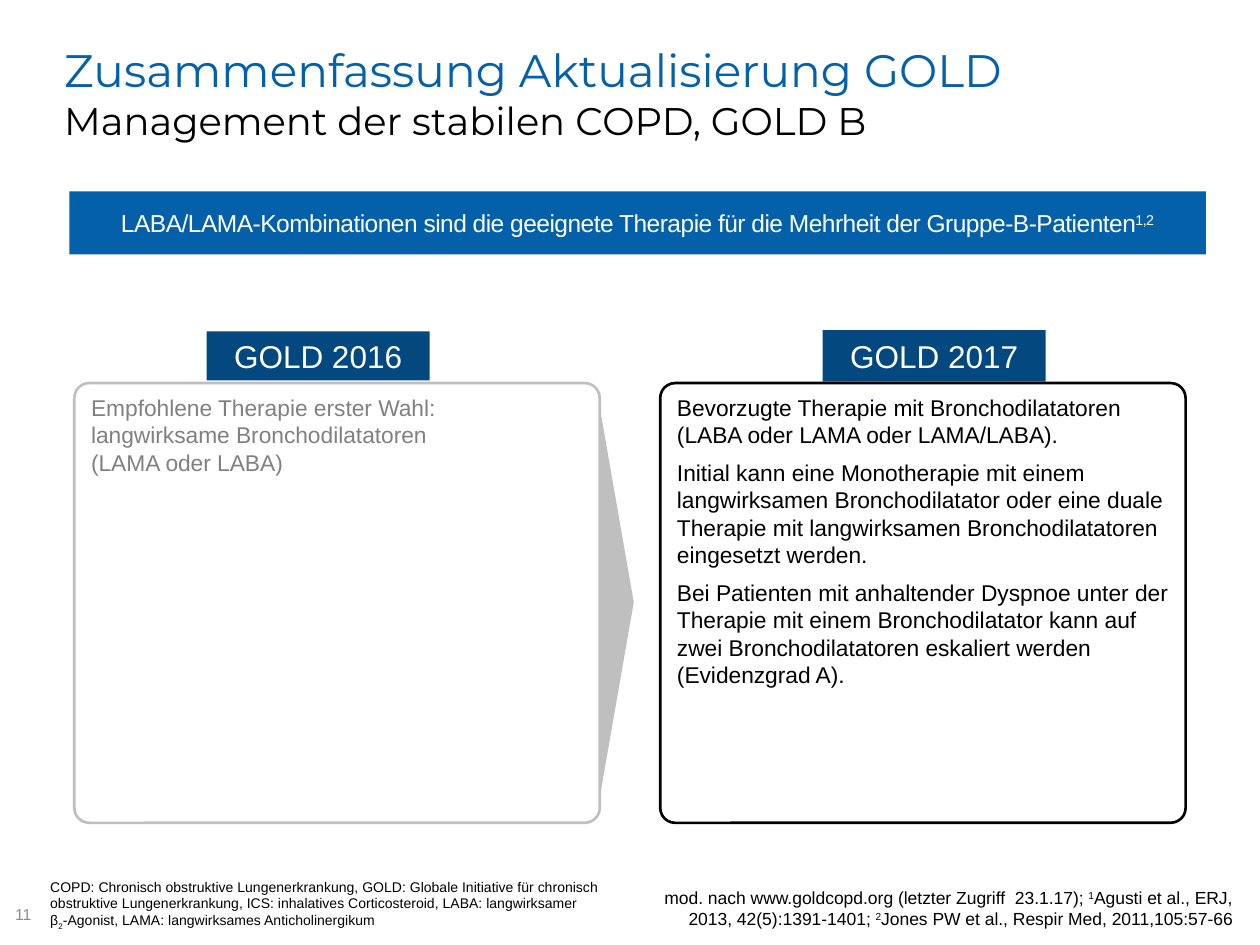
"""Build the slide on the updated management of stable COPD, GOLD B."""
from pptx import Presentation
from pptx.dml.color import RGBColor
from pptx.enum.shapes import MSO_SHAPE as Shape
from pptx.enum.text import MSO_ANCHOR as Anchor, PP_ALIGN as Align
from pptx.util import Inches, Pt

BLUE = RGBColor(0x04, 0x60, 0xA9)
NAVY = RGBColor(0x03, 0x48, 0x7F)
BLACK = RGBColor(0x00, 0x00, 0x00)
WHITE = RGBColor(0xFF, 0xFF, 0xFF)
SILVER = RGBColor(0xBF, 0xBF, 0xBF)
GRAY = RGBColor(0x80, 0x80, 0x80)
NUMBER_GRAY = RGBColor(0x8C, 0x8C, 0x8C)

SUPERSCRIPT = {"baseline": 30}
SUBSCRIPT = {"baseline": -25}


def add_run(paragraph, text, size=10, color=BLACK, font="Arial", baseline=0, spacing=0):
    for index, line in enumerate(text.split("\n")):
        if index:
            paragraph.add_line_break()
        if not line:
            continue
        run = paragraph.add_run()
        run.text = line
        run.font.size = Pt(size)
        run.font.name = font
        run.font.color.rgb = color
        properties = run._r.get_or_add_rPr()
        if baseline:
            properties.set("baseline", str(baseline * 1000))
        if spacing:
            properties.set("spc", str(round(spacing * 100)))


def write_text(shape, paragraphs, align=Align.LEFT, anchor=Anchor.TOP, insets=None,
               wrap=True, before=0, after=0, **style):
    frame = shape.text_frame
    frame.word_wrap = wrap
    frame.vertical_anchor = anchor
    if insets:
        (frame.margin_left, frame.margin_top,
         frame.margin_right, frame.margin_bottom) = map(Inches, insets)
    for index, runs in enumerate(paragraphs):
        paragraph = frame.add_paragraph() if index else frame.paragraphs[0]
        paragraph.alignment = align
        paragraph.space_before = Pt(before)
        paragraph.space_after = Pt(after)
        for text, changes in runs:
            add_run(paragraph, text, **{**style, **changes})


class SlideBuilder:
    def __init__(self, slide):
        self.slide = slide

    def text(self, box, *runs, **style):
        shape = self.slide.shapes.add_textbox(*map(Inches, box))
        write_text(shape, [runs], **style)

    def shape(self, kind, box, fill, line=None):
        shape = self.slide.shapes.add_shape(kind, *map(Inches, box))
        shape.shadow.inherit = False
        shape.fill.solid()
        shape.fill.fore_color.rgb = fill
        if line is None:
            shape.line.fill.background()
        else:
            shape.line.color.rgb = line
            shape.line.width = Pt(1.5)
        return shape

    def label(self, box, fill, *runs, **style):
        shape = self.shape(Shape.RECTANGLE, box, fill)
        write_text(shape, [runs], align=Align.CENTER, anchor=Anchor.MIDDLE,
                   color=WHITE, **style)

    def card(self, left, line, paragraphs, **style):
        shape = self.shape(Shape.ROUNDED_RECTANGLE, (left, 3.04, 4.17, 3.49), WHITE, line)
        shape.adjustments[0] = 0.034
        write_text(shape, [[(text, {})] for text in paragraphs], size=13, **style)

    def arrow(self, box):
        shape = self.shape(Shape.FLOWCHART_EXTRACT, box, SILVER)
        shape.rotation = 90


def main():
    presentation = Presentation()
    presentation.slide_width, presentation.slide_height = Inches(10), Inches(7.5)
    builder = SlideBuilder(presentation.slides.add_slide(presentation.slide_layouts[6]))

    builder.label(
        (0.55, 1.52, 9.02, 0.5), BLUE,
        ("LABA/LAMA-Kombinationen sind die geeignete Therapie für die Mehrheit "
         "der Gruppe-B-Patienten", {}),
        ("1,2", SUPERSCRIPT), size=14, spacing=-0.3)
    builder.text(
        (0.3, 6.92, 4.89, 0.5),
        ("COPD: Chronisch obstruktive Lungenerkrankung, GOLD: Globale Initiative für "
         "chronisch obstruktive Lungenerkrankung, ICS: inhalatives Corticosteroid, "
         "LABA: langwirksamer \nβ", {}),
        ("2", SUBSCRIPT),
        ("-Agonist, LAMA: langwirksames Anticholinergikum", {}), size=8)
    builder.text(
        (5.16, 6.99, 4.72, 0.45),
        ("mod. nach www.goldcopd.org (letzter Zugriff  23.1.17); ", {}),
        ("1", SUPERSCRIPT),
        ("Agusti et al., ERJ, 2013, 42(5):1391-1401; ", {}),
        ("2", SUPERSCRIPT),
        ("Jones PW et al., Respir Med, 2011,105:57-66", {}), align=Align.RIGHT)
    builder.text((0, 7.06, 0.31, 0.4), ("11", {}), size=9, color=NUMBER_GRAY,
                 anchor=Anchor.MIDDLE, insets=(0.12, 0.05, 0.05, 0.05), wrap=False)
    builder.text(
        (0.51, 0.21, 8.98, 1.05),
        ("Zusammenfassung Aktualisierung GOLD\n", {"size": 26, "color": BLUE}),
        ("Management der stabilen COPD, GOLD B", {"size": 22}),
        font="Montserrat", anchor=Anchor.MIDDLE, insets=(0, 0, 0, 0))

    builder.card(0.59, SILVER, [
        "Empfohlene Therapie erster Wahl: \nlangwirksame Bronchodilatatoren \n"
        "(LAMA oder LABA)"], color=GRAY, before=6)
    builder.label((1.64, 2.63, 1.77, 0.39), NAVY, ("GOLD 2016", {}), size=18)
    builder.card(5.24, BLACK, [
        "Bevorzugte Therapie mit Bronchodilatatoren (LABA oder LAMA oder LAMA/LABA).",
        "Initial kann eine Monotherapie mit einem langwirksamen Bronchodilatator oder "
        "eine duale Therapie mit langwirksamen Bronchodilatatoren eingesetzt werden.",
        "Bei Patienten mit anhaltender Dyspnoe unter der Therapie mit einem "
        "Bronchodilatator kann auf zwei Bronchodilatatoren eskaliert werden "
        "(Evidenzgrad A)."], after=6)
    builder.label((6.53, 2.62, 1.77, 0.41), NAVY, ("GOLD 2017", {}), size=18)
    builder.arrow((3.41, 4.65, 2.98, 0.26))

    presentation.save("out.pptx")


if __name__ == "__main__":
    main()
